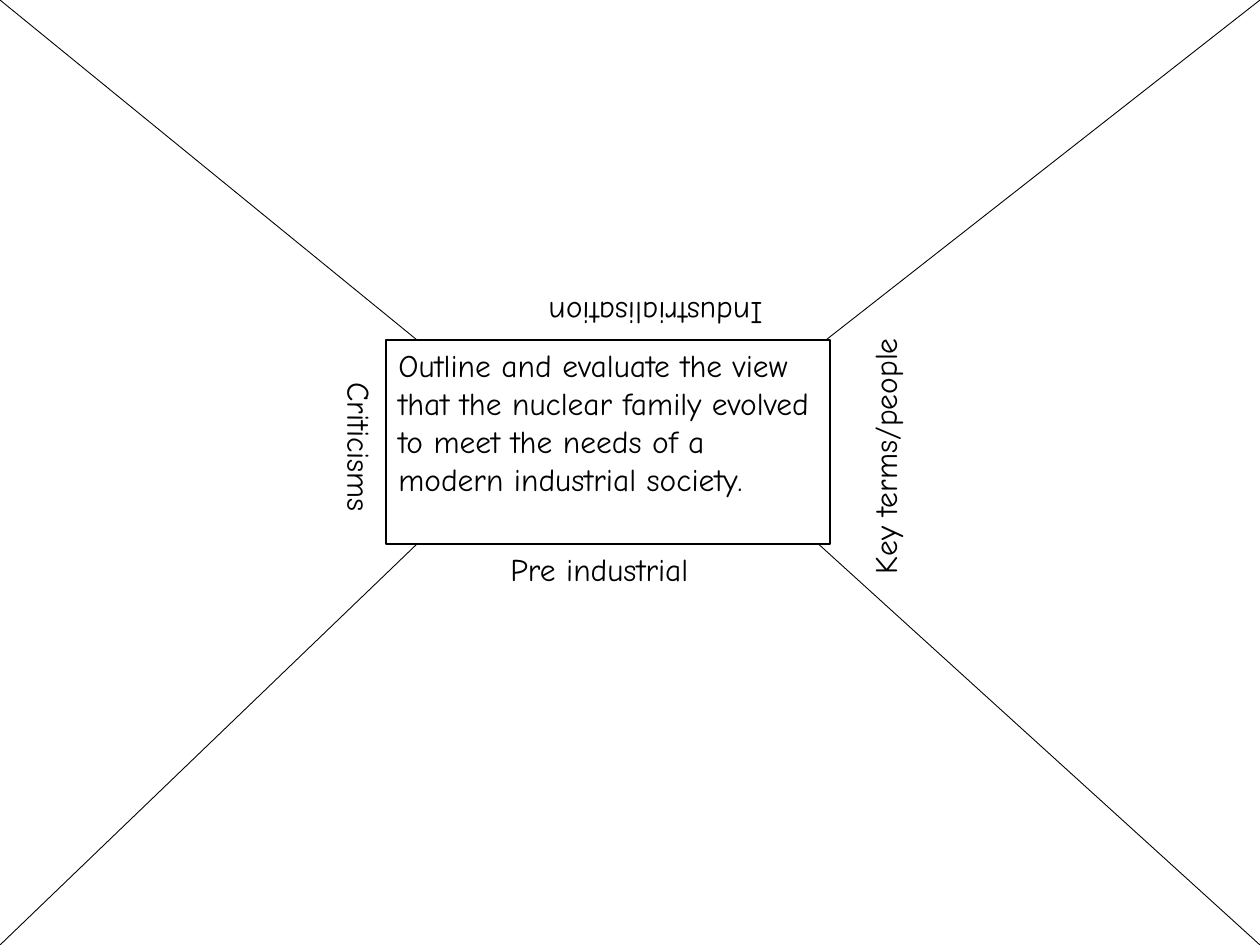
import pptx
import pptx.util
import pptx.dml.color
import pptx.enum.shapes
import pptx.enum.text
import pptx.oxml.ns
import lxml.etree

# Content, lengths in px
WIDTH, HEIGHT = 1260, 945
FONT, SIZE = "Comic Neue", 18
BLACK, WHITE = "000000", "FFFFFF"

QUESTION = ("Outline and evaluate the view that the nuclear family evolved "
            "to meet the needs of a modern industrial society.")
QUESTION_FRAME = (386, 340, 444, 204)

# Slide corner, then the end near the question box
DIAGONALS = [
    ((WIDTH, 0), (803, 358)),
    ((0, HEIGHT), (417, 544)),
    ((0, 0), (417, 340)),
    ((WIDTH, HEIGHT), (803, 530)),
]

# Text, frame before rotation, rotation
LABELS = [
    ("Pre industrial", (498, 544, 224, 50), 0),
    ("Industrialisation", (503, 290, 272, 50), 180),
    ("Key terms/people", (741, 418, 287, 50), 270),
    ("Criticisms", (273, 432, 174, 50), 90),
]


def emu(*lengths):
    return [round(length * 914400 / 126) for length in lengths]


def colour(value):
    return pptx.dml.color.RGBColor.from_string(value)


def write(box, text, wrap):
    frame = box.text_frame
    frame.word_wrap = wrap
    frame.auto_size = pptx.enum.text.MSO_AUTO_SIZE.SHAPE_TO_FIT_TEXT
    frame.vertical_anchor = pptx.enum.text.MSO_ANCHOR.TOP
    para = frame.paragraphs[0]
    para.text = text
    para.alignment = pptx.enum.text.PP_ALIGN.LEFT
    para.font.name = FONT
    para.font.size = pptx.util.Pt(SIZE)
    para.font.color.rgb = colour(BLACK)


def outline(part, points):
    part.line.color.rgb = colour(BLACK)
    part.line.width = pptx.util.Pt(points)


deck = pptx.Presentation()
deck.slide_width, deck.slide_height = emu(WIDTH, HEIGHT)
page = deck.slides.add_slide(deck.slide_layouts[6])

# Diagonals that split the page into four areas
for corner, inner in DIAGONALS:
    diagonal = page.shapes.add_connector(
        pptx.enum.shapes.MSO_CONNECTOR.STRAIGHT, *emu(*corner, *inner))
    outline(diagonal, 0.5)
    lxml.etree.SubElement(diagonal._element.spPr, pptx.oxml.ns.qn("a:effectLst"))

# Question in the centre
question = page.shapes.add_shape(
    pptx.enum.shapes.MSO_SHAPE.RECTANGLE, *emu(*QUESTION_FRAME))
question.shadow.inherit = False
question.fill.solid()
question.fill.fore_color.rgb = colour(WHITE)
outline(question, 1)
write(question, QUESTION, True)

# One label per area, turned to face outwards
for text, frame, rotation in LABELS:
    label = page.shapes.add_textbox(*emu(*frame))
    label.rotation = rotation
    write(label, text, False)

deck.save("out.pptx")
